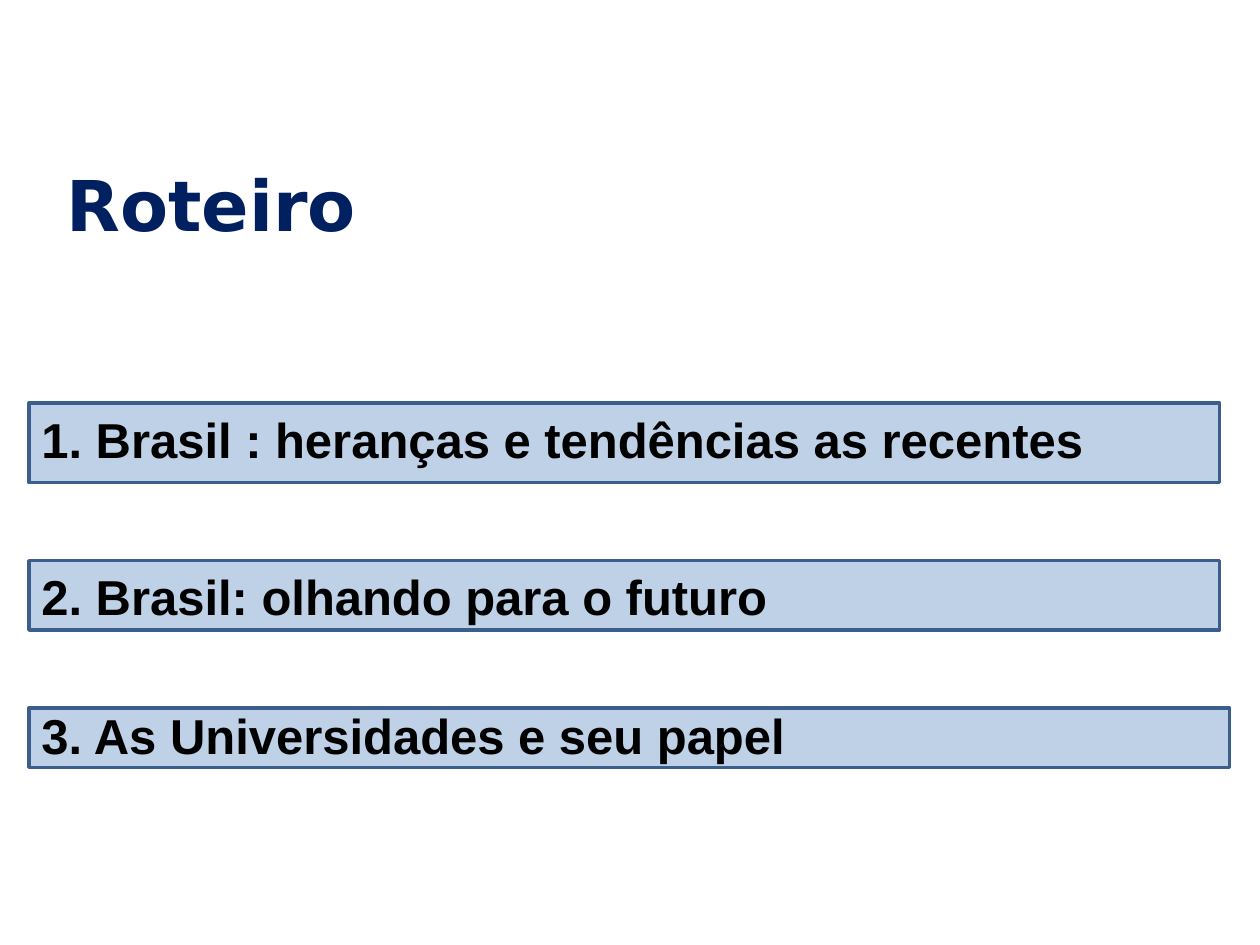
from dataclasses import dataclass

from lxml import etree
from pptx import Presentation
from pptx.dml.color import RGBColor
from pptx.enum.shapes import MSO_SHAPE
from pptx.enum.text import MSO_ANCHOR, MSO_AUTO_SIZE
from pptx.oxml.ns import qn
from pptx.slide import Slide
from pptx.util import Inches, Length, Pt

RECTANGLE = MSO_SHAPE.RECTANGLE
TOP = MSO_ANCHOR.TOP
MIDDLE = MSO_ANCHOR.MIDDLE
GROW = MSO_AUTO_SIZE.SHAPE_TO_FIT_TEXT
FIXED = MSO_AUTO_SIZE.NONE

NAVY = RGBColor(0x00, 0x20, 0x60)
BLACK = RGBColor(0x00, 0x00, 0x00)
BAND_BLUE = RGBColor(0x4F, 0x81, 0xBD)
BORDER_BLUE = RGBColor(0x3A, 0x5F, 0x8C)

SLIDE_WIDTH = Inches(10)
SLIDE_HEIGHT = Inches(7.5)
COLUMNS = 100
ROWS = 75
BAND_OPACITY = 36
BAND_LEFT = 2.3
LABEL_HEIGHT = 5.7

TITLE_FORMAT = {"name": "DejaVu Sans", "size": Pt(40), "bold": True}
TOPIC_FORMAT = {"name": "Arial", "size": Pt(28), "bold": True}


@dataclass(frozen=True)
class Area:
    column: float
    row: float
    columns: float
    rows: float

    def lengths(self) -> list[Length]:
        across = SLIDE_WIDTH / COLUMNS
        down = SLIDE_HEIGHT / ROWS
        return [
            Length(round(self.column * across)),
            Length(round(self.row * down)),
            Length(round(self.columns * across)),
            Length(round(self.rows * down)),
        ]


@dataclass(frozen=True)
class Topic:
    text: str
    band: Area
    label: Area


TOPICS = [
    Topic(
        "1. Brasil : heranças e tendências as recentes",
        Area(BAND_LEFT, 32, 94.5, 6.3),
        Area(BAND_LEFT, 32, 86.7, LABEL_HEIGHT),
    ),
    Topic(
        "2. Brasil: olhando para o futuro",
        Area(BAND_LEFT, 44.5, 94.5, 5.5),
        Area(BAND_LEFT, 44.5, 94.5, LABEL_HEIGHT),
    ),
    Topic(
        "3. As Universidades e seu papel",
        Area(BAND_LEFT, 56.2, 95.3, 4.7),
        Area(BAND_LEFT, 55.5, 97.7, LABEL_HEIGHT),
    ),
]


def add_band(page: Slide, area: Area) -> None:
    band = page.shapes.add_shape(RECTANGLE, *area.lengths())
    band.shadow.inherit = False
    band.fill.solid()
    band.fill.fore_color.rgb = BAND_BLUE
    band.line.color.rgb = BORDER_BLUE
    band.line.width = Pt(2)
    color = band.fill._xPr.find(qn("a:solidFill")).find(qn("a:srgbClr"))
    etree.SubElement(color, qn("a:alpha")).set("val", str(BAND_OPACITY * 1000))


def add_text(
    page: Slide,
    area: Area,
    text: str,
    font_format: dict,
    color: RGBColor,
    anchor: MSO_ANCHOR = TOP,
    auto_size: MSO_AUTO_SIZE = GROW,
) -> None:
    frame = page.shapes.add_textbox(*area.lengths()).text_frame
    frame.word_wrap = True
    frame.auto_size = auto_size
    frame.vertical_anchor = anchor
    span = frame.paragraphs[0].add_run()
    span.text = text
    for name, value in font_format.items():
        setattr(span.font, name, value)
    span.font.color.rgb = color


def main() -> None:
    deck = Presentation()
    deck.slide_width = SLIDE_WIDTH
    deck.slide_height = SLIDE_HEIGHT
    page = deck.slides.add_slide(deck.slide_layouts[6])
    title_area = Area(4.3, 10.7, 43, 10.9)
    add_text(page, title_area, "Roteiro", TITLE_FORMAT, NAVY, MIDDLE, FIXED)
    for topic in TOPICS:
        add_band(page, topic.band)
    for topic in TOPICS:
        add_text(page, topic.label, topic.text, TOPIC_FORMAT, BLACK)
    deck.save("out.pptx")


if __name__ == "__main__":
    main()
